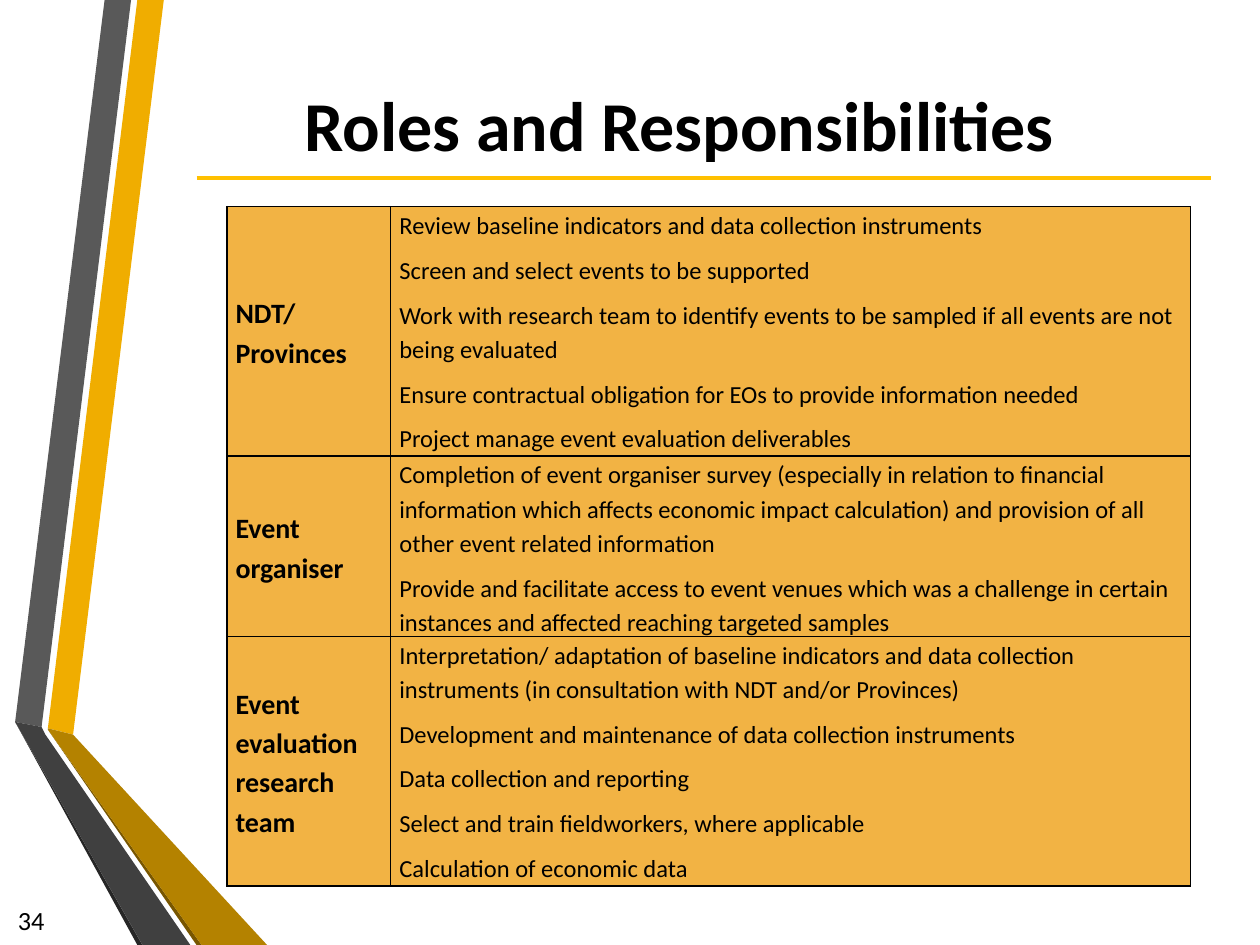
from pptx import Presentation
from pptx.util import Inches, Pt
from pptx.dml.color import RGBColor
from pptx.enum.shapes import MSO_CONNECTOR as Conn
from pptx.enum.text import MSO_ANCHOR as Anchor, PP_ALIGN as Align
from pptx.oxml import parse_xml
from pptx.oxml.ns import nsdecls
from lxml.etree import SubElement

COLORS = {
    "text": "000000", "border": "000000", "rule": "FFC000", "cell": "F2B344",
    "gold": "F0AD00", "bronze": "B48200", "brown": "785600",
    "gray": "595959", "dark": "404040", "black": "262626",
}
FONT = "Calibri"

TITLE = "Roles and Responsibilities"
NUMBER = "34"

# Folded ribbons, back to front
RIBBONS = [
    ("gold", [(0.38, 5.78), (0.58, 5.83), (1.3, 0), (1.09, 0)]),
    ("gray", [(1.04, 0), (0.83, 0), (0.12, 5.73), (0.33, 5.77)]),
    ("black", [(0.12, 5.73), (1.09, 7.5), (1.13, 7.5)]),
    ("brown", [(0.38, 5.79), (1.56, 7.5), (1.6, 7.5)]),
    ("bronze", [(0.38, 5.78), (0.38, 5.79), (1.6, 7.5), (2.12, 7.5), (0.58, 5.83)]),
    ("dark", [(0.12, 5.73), (1.13, 7.5), (1.51, 7.5), (0.36, 5.83), (0.33, 5.77)]),
]

# Role, row height, duties
ROLES = [
    ("NDT/ Provinces", 1.98, [
        "Review baseline indicators and data collection instruments",
        "Screen and select events to be supported",
        "Work with research team to identify events to be sampled if all events are not being evaluated",
        "Ensure contractual obligation for EOs to provide information needed",
        "Project manage event evaluation deliverables",
    ]),
    ("Event organiser", 1.43, [
        "Completion of event organiser survey (especially in relation to financial information which affects economic impact calculation) and provision of all other event related information",
        "Provide and facilitate access to event venues which was a challenge in certain instances and affected reaching targeted samples",
    ]),
    ("Event evaluation research team", 1.98, [
        "Interpretation/ adaptation of baseline indicators and data collection instruments (in consultation with NDT and/or Provinces)",
        "Development and maintenance of data collection instruments",
        "Data collection and reporting",
        "Select and train fieldworkers, where applicable",
        "Calculation of economic data",
    ]),
]
WIDTHS = [1.3, 6.35]


def color(name):
    return RGBColor.from_string(COLORS[name])


def style(par, size, bold=False):
    font = par.font
    font.name, font.size, font.bold = FONT, Pt(size), bold
    font.color.rgb = color("text")


def add_text(slide, text, box, size, align, bold=False):
    frame = slide.shapes.add_textbox(*map(Inches, box)).text_frame
    frame.word_wrap = True
    frame.vertical_anchor = Anchor.MIDDLE
    par = frame.paragraphs[0]
    par.text, par.alignment = text, align
    style(par, size, bold)


def add_ribbon(slide, name, points):
    points = [(Inches(x), Inches(y)) for x, y in points]
    pen = slide.shapes.build_freeform(*points[0])
    pen.add_line_segments(points[1:], close=True)
    shape = pen.convert_to_shape()
    shape.shadow.inherit = False
    shape.fill.solid()
    shape.fill.fore_color.rgb = color(name)
    shape.line.fill.background()


def add_borders(cell):
    props = cell._tc.get_or_add_tcPr()
    for i, side in enumerate(("lnL", "lnR", "lnT", "lnB")):
        props.insert(i, parse_xml(
            f'<a:{side} {nsdecls("a")} w="{Pt(1)}"><a:solidFill>'
            f'<a:srgbClr val="{COLORS["border"]}"/></a:solidFill></a:{side}>'))


def fill_cell(cell, lines, size, bold, anchor):
    cell.margin_left = cell.margin_right = Inches(0.07)
    cell.margin_top = cell.margin_bottom = 0
    cell.vertical_anchor = anchor
    cell.fill.solid()
    cell.fill.fore_color.rgb = color("cell")
    add_borders(cell)
    frame = cell.text_frame
    for i, line in enumerate(lines):
        par = frame.add_paragraph() if i else frame.paragraphs[0]
        par.text = line
        par.line_spacing, par.space_before = 1.15, Pt(6)
        style(par, size, bold)


def add_roles(slide):
    heights = [height for _, height, _ in ROLES]
    box = (1.8, 1.64, sum(WIDTHS), sum(heights))
    table = slide.shapes.add_table(len(ROLES), 2, *map(Inches, box)).table
    for col, width in zip(table.columns, WIDTHS):
        col.width = Inches(width)
    for i, (role, height, duties) in enumerate(ROLES):
        table.rows[i].height = Inches(height)
        fill_cell(table.cell(i, 0), [role], 16, True, Anchor.MIDDLE)
        fill_cell(table.cell(i, 1), duties, 14, False, Anchor.TOP)


def main():
    prs = Presentation()
    prs.slide_width, prs.slide_height = Inches(10), Inches(7.5)
    slide = prs.slides.add_slide(prs.slide_layouts[6])

    # Ribbons
    for name, points in RIBBONS:
        add_ribbon(slide, name, points)

    # Title and rule
    add_text(slide, TITLE, (0.78, 0.47, 9.22, 1.02), 40, Align.CENTER, True)
    rule = slide.shapes.add_connector(
        Conn.STRAIGHT, *map(Inches, (1.56, 1.41, 9.61, 1.41)))
    rule.line.color.rgb = color("rule")
    rule.line.width = Pt(2.25)
    SubElement(rule._element.spPr,
               "{http://schemas.openxmlformats.org/drawingml/2006/main}effectLst")

    # Table and slide number
    add_roles(slide)
    add_text(slide, NUMBER, (0, 7.1, 0.45, 0.4), 15, Align.RIGHT)

    prs.save("out.pptx")


if __name__ == "__main__":
    main()
